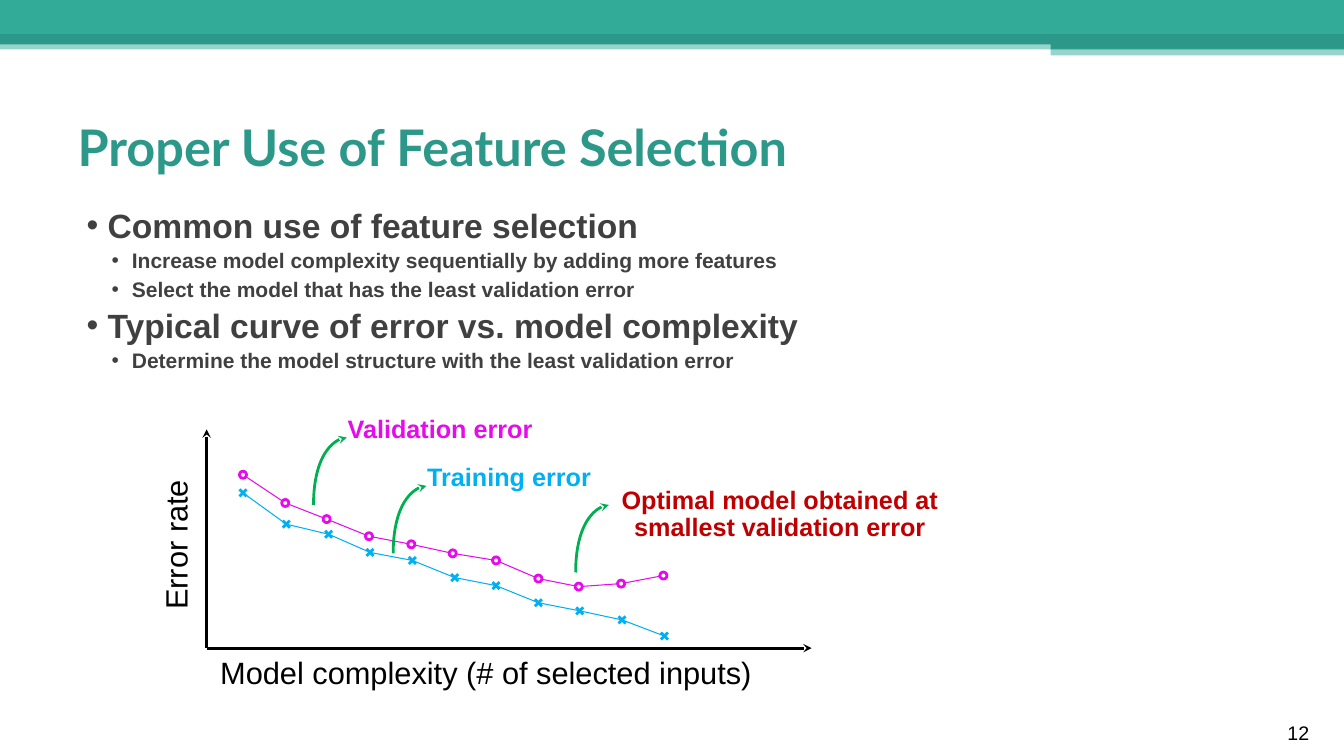
from dataclasses import dataclass
from itertools import pairwise
from math import hypot

from lxml.etree import SubElement
from pptx import Presentation
from pptx.dml.color import RGBColor
from pptx.enum.shapes import MSO_CONNECTOR, MSO_SHAPE
from pptx.enum.text import MSO_ANCHOR, PP_ALIGN
from pptx.oxml.ns import qn
from pptx.util import Inches, Pt

TEAL, DARK_TEAL = "32AB99", "2C9889"
GRAY, BLACK = "404040", "000000"
MAGENTA, BLUE, GREEN, RED = "E60BEB", "00B0F0", "00B050", "C00000"
MARKER = 0.07
Point = tuple[float, float]


@dataclass
class Band:
    left: float
    top: float
    width: float
    height: float
    color: str
    opacity: int = 100


@dataclass
class Label:
    text: str
    left: float
    top: float
    width: float
    height: float
    size: float
    color: str
    bold: bool = False
    rotation: float = 0


@dataclass
class Bullet:
    text: str
    level: int = 0


@dataclass
class BulletStyle:
    size: float
    indent: float
    hanging: float


BANDS = [
    Band(0, 0.4, 13.33, 0.09, TEAL, 50),
    Band(0, 0, 13.33, 0.34, TEAL),
    Band(0, 0.34, 13.33, 0.1, DARK_TEAL),
    Band(10.42, 0.39, 2.92, 0.1, DARK_TEAL),
    Band(10.42, 0.48, 2.92, 0.07, TEAL, 50),
]
BULLETS = [
    Bullet("Common use of feature selection"),
    Bullet("Increase model complexity sequentially by adding more features", 1),
    Bullet("Select the model that has the least validation error", 1),
    Bullet("Typical curve of error vs. model complexity"),
    Bullet("Determine the model structure with the least validation error", 1),
]
BULLET_STYLES = [BulletStyle(24, 0.3, 0.21), BulletStyle(15, 0.54, 0.2)]
LABELS = [
    Label("Model complexity (# of selected inputs)", 2.05, 6.55, 5.54, 0.35, 22, BLACK),
    Label("Error rate", 1.04, 5.23, 1.51, 0.35, 22, BLACK, rotation=270),
    Label("Validation error", 3.34, 4.14, 2.05, 0.31, 18, MAGENTA, True),
    Label("Training error", 4.13, 4.62, 1.84, 0.31, 18, BLUE, True),
    Label("Optimal model obtained at\nsmallest validation error",
          6.05, 4.85, 3.37, 0.59, 18, RED, True),
]
VALIDATION = [(2.41, 4.71), (2.83, 4.99), (3.24, 5.15), (3.66, 5.32), (4.08, 5.4), (4.49, 5.49),
              (4.92, 5.56), (5.34, 5.74), (5.74, 5.82), (6.16, 5.79), (6.58, 5.71)]
TRAINING = [(2.41, 4.89), (2.84, 5.2), (3.26, 5.3), (3.67, 5.48), (4.09, 5.56), (4.51, 5.73),
            (4.92, 5.81), (5.34, 5.98), (5.75, 6.06), (6.17, 6.15), (6.59, 6.31)]
POINTERS = [(3.11, 4.34), (3.9, 4.82), (5.71, 5.01)]
POINTER_CURVE = [(0, 0.67), (0, 0.3), (0.15, 0.01), (0.33, 0)]
ORIGIN, AXIS_ENDS = (2.05, 6.43), [(2.05, 4.26), (8.05, 6.43)]


def rgb(color: str) -> RGBColor:
    return RGBColor.from_string(color)


def set_font(paragraph, size: float, color: str, bold: bool = False, name: str = "Arial") -> None:
    for span in paragraph.runs:
        span.font.name, span.font.size, span.font.bold = name, Pt(size), bold
        span.font.color.rgb = rgb(color)


def set_line(shape, color: str, width: float, arrow: bool = False) -> None:
    shape.line.color.rgb = rgb(color)
    shape.line.width = Pt(width)
    if arrow:
        SubElement(shape.line._get_or_add_ln(), qn("a:tailEnd"), type="stealth")


def add_line(page, start: Point, end: Point, color: str, width: float, arrow: bool = False) -> None:
    ends = [Inches(value) for value in (*start, *end)]
    line = page.shapes.add_connector(MSO_CONNECTOR.STRAIGHT, *ends)
    set_line(line, color, width, arrow)
    SubElement(line._element.spPr, qn("a:effectLst"))


def add_band(page, band: Band) -> None:
    shape = page.shapes.add_shape(MSO_SHAPE.RECTANGLE, Inches(band.left), Inches(band.top),
                                  Inches(band.width), Inches(band.height))
    shape.shadow.inherit = False
    shape.fill.solid()
    shape.fill.fore_color.rgb = rgb(band.color)
    shape.line.fill.background()
    if band.opacity < 100:
        color = shape._element.spPr.find(f".//{qn('a:srgbClr')}")
        SubElement(color, qn("a:alpha"), val=str(band.opacity * 1000))


def add_bullets(page) -> None:
    box = page.shapes.add_textbox(Inches(0.67), Inches(1.95), Inches(12), Inches(4.84))
    frame = box.text_frame
    frame.word_wrap = True
    frame.margin_top = Inches(0.08)
    frame.text = "\n".join(bullet.text for bullet in BULLETS)
    for index, (bullet, paragraph) in enumerate(zip(BULLETS, frame.paragraphs)):
        style = BULLET_STYLES[bullet.level]
        paragraph.level = bullet.level
        if index:
            paragraph.space_before = Pt(2.2)
        properties = paragraph._p.get_or_add_pPr()
        properties.set("marL", str(Inches(style.indent)))
        properties.set("indent", str(-Inches(style.hanging)))
        SubElement(properties, qn("a:buFont"), typeface="Arial")
        SubElement(properties, qn("a:buChar"), char="•")
        set_font(paragraph, style.size, GRAY, True)


def add_label(page, label: Label) -> None:
    box = page.shapes.add_textbox(Inches(label.left), Inches(label.top),
                                  Inches(label.width), Inches(label.height))
    box.rotation = label.rotation
    box.text_frame.text = label.text
    for index, paragraph in enumerate(box.text_frame.paragraphs):
        paragraph.alignment = PP_ALIGN.CENTER
        paragraph.line_spacing = 0.65
        if index:
            paragraph.space_before = Pt(0.3 * label.size)
        set_font(paragraph, label.size, label.color, label.bold)


def add_series(page, points: list[Point], color: str, trim: float) -> None:
    for (x1, y1), (x2, y2) in pairwise(points):
        share = trim / hypot(x2 - x1, y2 - y1)
        dx, dy = (x2 - x1) * share, (y2 - y1) * share
        add_line(page, (x1 + dx, y1 + dy), (x2 - dx, y2 - dy), color, 0.75)


def add_circle(page, x: float, y: float) -> None:
    circle = page.shapes.add_shape(MSO_SHAPE.OVAL, Inches(x - MARKER / 2), Inches(y - MARKER / 2),
                                   Inches(MARKER), Inches(MARKER))
    circle.shadow.inherit = False
    circle.fill.background()
    set_line(circle, MAGENTA, 2)


def add_cross(page, x: float, y: float) -> None:
    half = MARKER / 2
    for rise in (half, -half):
        add_line(page, (x - half, y - rise), (x + half, y + rise), BLUE, 2)


def add_pointer(page, left: float, top: float) -> None:
    start, *controls = [(Inches(left + x), Inches(top + y)) for x, y in POINTER_CURVE]
    builder = page.shapes.build_freeform(*start)
    builder.add_line_segments(controls, close=False)
    pointer = builder.convert_to_shape()
    # Turn the three segments into one Bézier curve
    outline = pointer._element.spPr.find(f".//{qn('a:path')}")
    segments = outline.findall(qn("a:lnTo"))
    curve = SubElement(outline, qn("a:cubicBezTo"))
    for segment in segments:
        curve.append(segment[0])
        outline.remove(segment)
    pointer.shadow.inherit = False
    pointer.fill.background()
    set_line(pointer, GREEN, 2, arrow=True)


def main() -> None:
    deck = Presentation()
    deck.slide_width, deck.slide_height = Inches(13.33), Inches(7.5)
    page = deck.slides.add_slide(deck.slide_layouts[5])

    # Header bands and title
    for band in BANDS:
        add_band(page, band)
    title = page.shapes.title
    title.left, title.top, title.width, title.height = map(Inches, (0.67, 1.02, 12, 0.86))
    title.text_frame.text = "Proper Use of Feature Selection"
    title.text_frame.vertical_anchor = MSO_ANCHOR.MIDDLE
    heading = title.text_frame.paragraphs[0]
    heading.alignment = PP_ALIGN.LEFT
    set_font(heading, 36, DARK_TEAL, True, "Lato")

    add_bullets(page)

    # Error curves
    for end in AXIS_ENDS:
        add_line(page, ORIGIN, end, BLACK, 2, arrow=True)
    add_series(page, VALIDATION, MAGENTA, MARKER / 2)
    add_series(page, TRAINING, BLUE, 0)
    for point in VALIDATION:
        add_circle(page, *point)
    for point in TRAINING:
        add_cross(page, *point)
    for corner in POINTERS:
        add_pointer(page, *corner)
    for label in LABELS:
        add_label(page, label)

    # Page number
    number = page.shapes.add_textbox(Inches(12.67), Inches(7.1), Inches(0.54), Inches(0.3))
    number.text_frame.text = "12"
    set_font(number.text_frame.paragraphs[0], 14, BLACK)

    deck.save("out.pptx")


if __name__ == "__main__":
    main()
